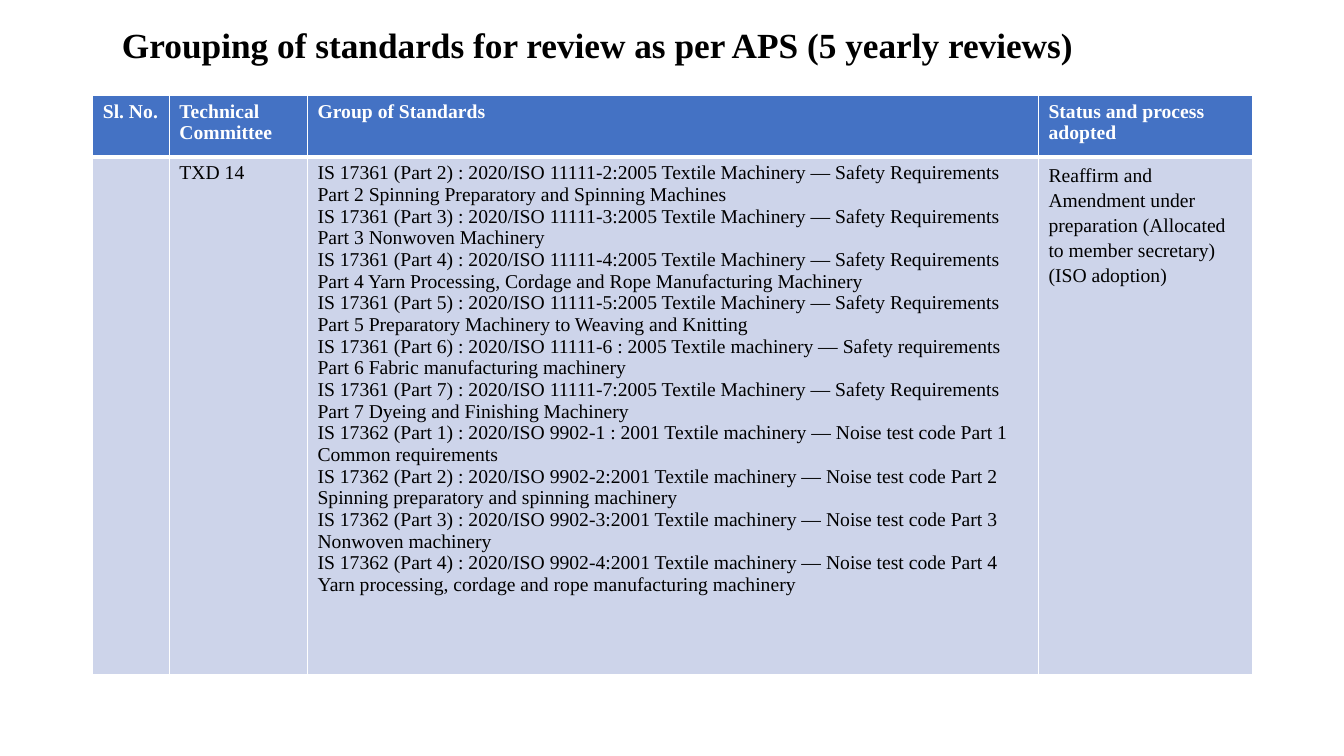
from lxml import etree
from pptx import Presentation
from pptx.dml.color import RGBColor
from pptx.enum.text import MSO_ANCHOR, MSO_AUTO_SIZE, PP_ALIGN
from pptx.oxml.ns import qn
from pptx.util import Pt

PX = 9144  # EMU per px, 100 px to the inch
LEFT = PP_ALIGN.LEFT
BOTTOM = MSO_ANCHOR.BOTTOM
NO_AUTOFIT = MSO_AUTO_SIZE.NONE
TITLE_ONLY = 5

BLACK = RGBColor(0x00, 0x00, 0x00)
WHITE = RGBColor(0xFF, 0xFF, 0xFF)
HEADER_BLUE = RGBColor(0x44, 0x72, 0xC4)
ROW_BLUE = RGBColor(0xCD, 0xD4, 0xEA)

TITLE = "Grouping of standards for review as per APS (5 yearly reviews)"
HEADINGS = ["Sl. No.", "Technical Committee", "Group of Standards", "Status and process adopted"]
STANDARDS = [
    "IS 17361 (Part 2) : 2020/ISO 11111-2:2005 Textile Machinery — Safety Requirements "
    "Part 2 Spinning Preparatory and Spinning Machines",
    "IS 17361 (Part 3) : 2020/ISO 11111-3:2005 Textile Machinery — Safety Requirements "
    "Part 3 Nonwoven Machinery",
    "IS 17361 (Part 4) : 2020/ISO 11111-4:2005 Textile Machinery — Safety Requirements "
    "Part 4 Yarn Processing, Cordage and Rope Manufacturing Machinery",
    "IS 17361 (Part 5) : 2020/ISO 11111-5:2005 Textile Machinery — Safety Requirements "
    "Part 5 Preparatory Machinery to Weaving and Knitting",
    "IS 17361 (Part 6) : 2020/ISO 11111-6 : 2005 Textile machinery — Safety requirements "
    "Part 6 Fabric manufacturing machinery",
    "IS 17361 (Part 7) : 2020/ISO 11111-7:2005 Textile Machinery — Safety Requirements "
    "Part 7 Dyeing and Finishing Machinery",
    "IS 17362 (Part 1) : 2020/ISO 9902-1 : 2001 Textile machinery — Noise test code "
    "Part 1 Common requirements",
    "IS 17362 (Part 2) : 2020/ISO 9902-2:2001 Textile machinery — Noise test code "
    "Part 2 Spinning preparatory and spinning machinery",
    "IS 17362 (Part 3) : 2020/ISO 9902-3:2001 Textile machinery — Noise test code "
    "Part 3 Nonwoven machinery",
    "IS 17362 (Part 4) : 2020/ISO 9902-4:2001 Textile machinery — Noise test code "
    "Part 4 Yarn processing, cordage and rope manufacturing machinery",
]
STATUS = ("Reaffirm and Amendment under preparation (Allocated to member secretary) "
          "(ISO adoption)")


def write_text(frame, lines, *, font, size, color, bold=False, spacing=1.0):
    """Fill a text frame with one paragraph per line."""
    for index, line in enumerate(lines):
        paragraph = frame.paragraphs[0] if index == 0 else frame.add_paragraph()
        paragraph.alignment = LEFT
        paragraph.line_spacing = spacing
        run = paragraph.add_run()
        run.text = line
        run.font.name = font
        run.font.size = Pt(size)
        run.font.bold = bold
        run.font.color.rgb = color


class StandardsSlide:
    font = "Times New Roman"
    title_size = 25.2
    table_size = 14

    def __init__(self, presentation):
        self.slide = presentation.slides.add_slide(presentation.slide_layouts[TITLE_ONLY])

    def title(self, text, left, top, width, height):
        heading = self.slide.shapes.title
        heading.left, heading.top = left * PX, top * PX
        heading.width, heading.height = width * PX, height * PX
        frame = heading.text_frame
        frame.word_wrap = True
        frame.auto_size = NO_AUTOFIT
        frame.vertical_anchor = BOTTOM
        write_text(frame, [text], font=self.font, size=self.title_size,
                   color=BLACK, bold=True, spacing=0.9)

    def table(self, left, top, column_widths, row_heights):
        table = self.slide.shapes.add_table(
            len(row_heights), len(column_widths), left * PX, top * PX,
            sum(column_widths) * PX, sum(row_heights) * PX).table
        for column, width in zip(table.columns, column_widths):
            column.width = width * PX
        for row, height in zip(table.rows, row_heights):
            row.height = height * PX
        return table

    def cell(self, cell, lines, fill, color, borders, bold=False, spacing=1.0):
        cell.fill.solid()
        cell.fill.fore_color.rgb = fill
        self.borders(cell, borders)
        write_text(cell.text_frame, lines, font=self.font, size=self.table_size,
                   color=color, bold=bold, spacing=spacing)

    def borders(self, cell, widths):
        """Draw white left, right, top and bottom borders, widths in points."""
        properties = cell._tc.get_or_add_tcPr()
        for index, (side, width) in enumerate(zip("LRTB", widths)):
            line = etree.Element(qn(f"a:ln{side}"), w=str(Pt(width)))
            fill = etree.SubElement(line, qn("a:solidFill"))
            etree.SubElement(fill, qn("a:srgbClr"), val=str(WHITE))
            properties.insert(index, line)


def main():
    presentation = Presentation()
    presentation.slide_width = 1333 * PX
    presentation.slide_height = 750 * PX
    page = StandardsSlide(presentation)

    # Title
    page.title(TITLE, 111, 29, 1150, 42)

    # Table of standards: header row, then one committee
    standards = page.table(92, 95, [76, 137, 725, 212], [61, 513])
    for column, heading in enumerate(HEADINGS):
        page.cell(standards.cell(0, column), [heading], HEADER_BLUE, WHITE,
                  (1, 1, 1, 3), bold=True)
    committee = [([], 1.0), (["TXD 14"], 1.0), (STANDARDS, 1.0), ([STATUS], 1.15)]
    for column, (lines, spacing) in enumerate(committee):
        page.cell(standards.cell(1, column), lines, ROW_BLUE, BLACK,
                  (1, 1, 3, 1), spacing=spacing)

    presentation.save("out.pptx")


if __name__ == "__main__":
    main()
